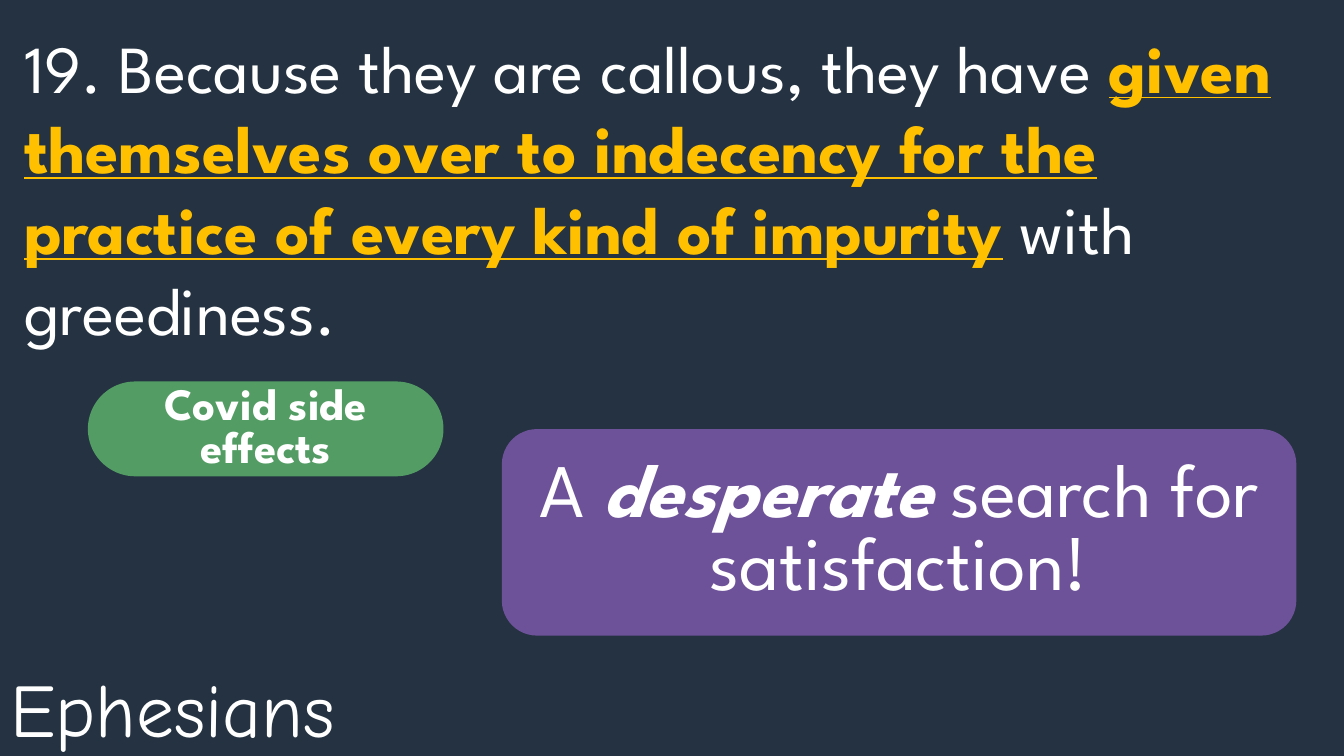
from dataclasses import dataclass, field

import lxml.etree
import pptx
import pptx.dml.color
import pptx.enum.shapes
import pptx.enum.text
import pptx.oxml.ns
import pptx.util

Pt = pptx.util.Pt
Align = pptx.enum.text.PP_ALIGN
Anchor = pptx.enum.text.MSO_ANCHOR


@dataclass(frozen=True)
class Theme:
    back: str = "243241"
    white: str = "FFFFFF"
    gold: str = "FFC000"
    purple: str = "6E5299"
    green: str = "539D64"
    sans: str = "League Spartan"
    comic: str = "Comic Neue"
    large: int = 54
    verse: int = 48
    small: int = 32


THEME = Theme()


@dataclass(frozen=True)
class Run:
    text: str
    color: str = THEME.white
    form: dict = field(default_factory=dict)


@dataclass(frozen=True)
class Block:
    """Place and type of one text; box is left, top, width, height in points."""
    box: tuple[float, float, float, float]
    size: int
    runs: list[Run]
    face: str = THEME.sans
    align: Align = Align.LEFT
    anchor: Anchor = Anchor.TOP
    space: float = 1.0


@dataclass(frozen=True)
class Badge:
    block: Block
    fill: str
    curve: float


TITLE = Block((0, 469.5, 280, 72.5), THEME.large, [Run("Ephesians")], THEME.comic)
VERSE = Block((10, 15, 936, 240), THEME.verse, [
    Run("19. Because they are callous, they have "),
    Run("given themselves over to indecency for the practice of every kind of impurity",
        THEME.gold, {"bold": True, "underline": True}),
    Run(" with greediness."),
])
CENTER = {"align": Align.CENTER, "anchor": Anchor.MIDDLE, "space": 0.8}
BADGES = [
    Badge(Block((358.5, 306.5, 567.5, 147.5), THEME.large, [
        Run("A "),
        Run("desperate", form={"bold": True, "italic": True}),
        Run(" search for satisfaction!"),
    ], **CENTER), THEME.purple, 0.17),
    Badge(Block((62.75, 272.5, 254, 67.75), THEME.small, [
        Run("Covid side effects", form={"bold": True}),
    ], **CENTER), THEME.green, 0.5),
]


def rgb(code: str) -> pptx.dml.color.RGBColor:
    return pptx.dml.color.RGBColor.from_string(code)


def apply(target: object, form: dict) -> None:
    for name, value in form.items():
        setattr(target, name, value)


def write(shape, block: Block) -> None:
    """Place the shape and set its one paragraph, with no bullet."""
    apply(shape, dict(zip(("left", "top", "width", "height"), map(Pt, block.box))))
    frame = shape.text_frame
    apply(frame, {"word_wrap": True, "vertical_anchor": block.anchor,
                  "auto_size": pptx.enum.text.MSO_AUTO_SIZE.NONE})
    para = frame.paragraphs[0]
    apply(para, {"alignment": block.align, "line_spacing": block.space,
                 "space_before": Pt(0)})
    props = para._p.get_or_add_pPr()
    props.set("marL", "0")
    props.set("indent", "0")
    lxml.etree.SubElement(props, pptx.oxml.ns.qn("a:buNone"))
    for part in block.runs:
        run = para.add_run()
        run.text = part.text
        apply(run.font, {"name": block.face, "size": Pt(block.size), **part.form})
        run.font.color.rgb = rgb(part.color)


def draw(slide, badge: Badge) -> None:
    shape = slide.shapes.add_shape(
        pptx.enum.shapes.MSO_SHAPE.ROUNDED_RECTANGLE, *map(Pt, badge.block.box))
    shape.adjustments[0] = badge.curve
    shape.shadow.inherit = False
    shape.fill.solid()
    shape.fill.fore_color.rgb = rgb(badge.fill)
    shape.line.fill.background()
    write(shape, badge.block)


def main() -> None:
    deck = pptx.Presentation()
    apply(deck, {"slide_width": Pt(960), "slide_height": Pt(540)})
    slide = deck.slides.add_slide(deck.slide_layouts[1])
    slide.background.fill.solid()
    slide.background.fill.fore_color.rgb = rgb(THEME.back)
    write(slide.shapes.title, TITLE)
    write(slide.placeholders[1], VERSE)
    for badge in BADGES:
        draw(slide, badge)
    deck.save("out.pptx")


if __name__ == "__main__":
    main()
